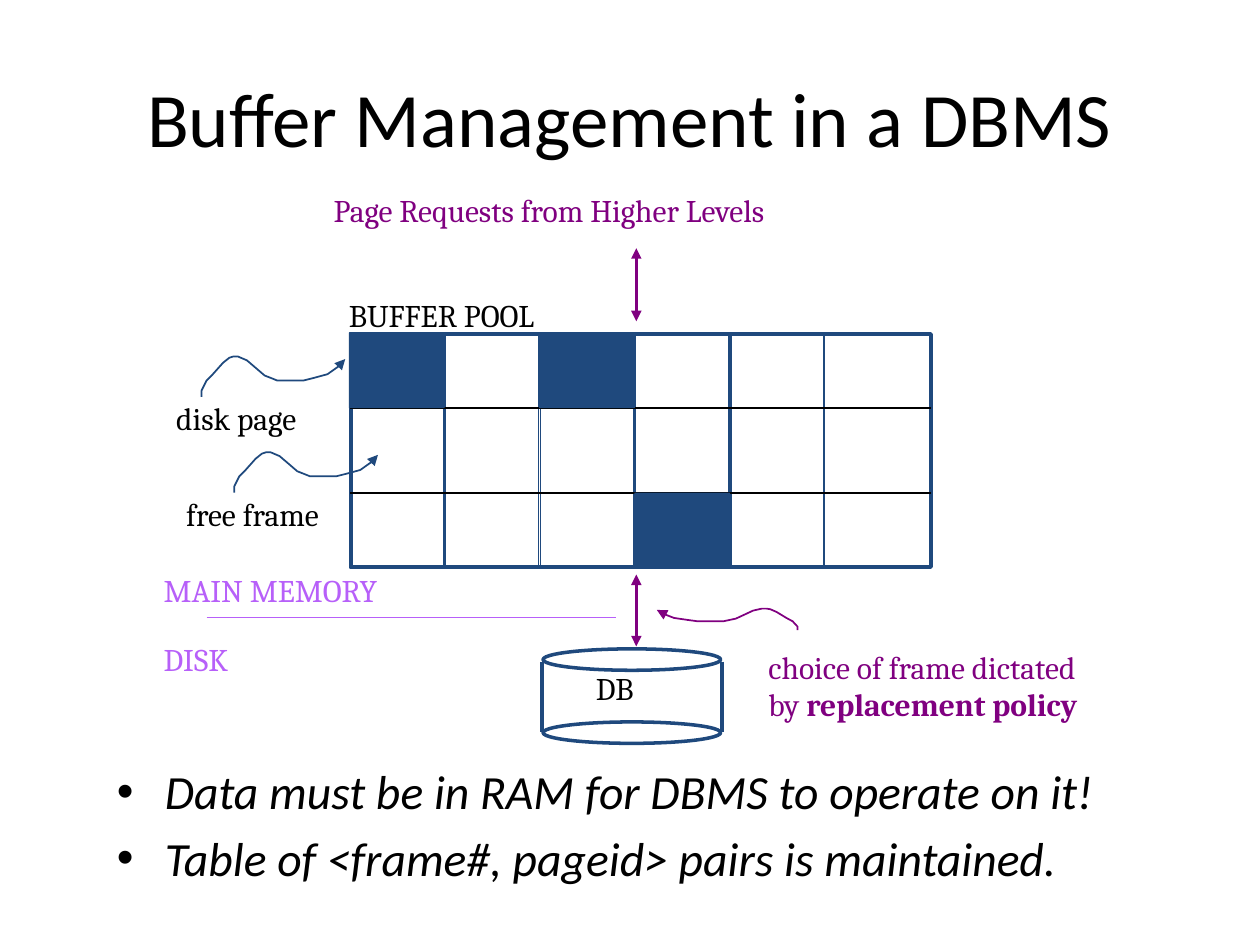
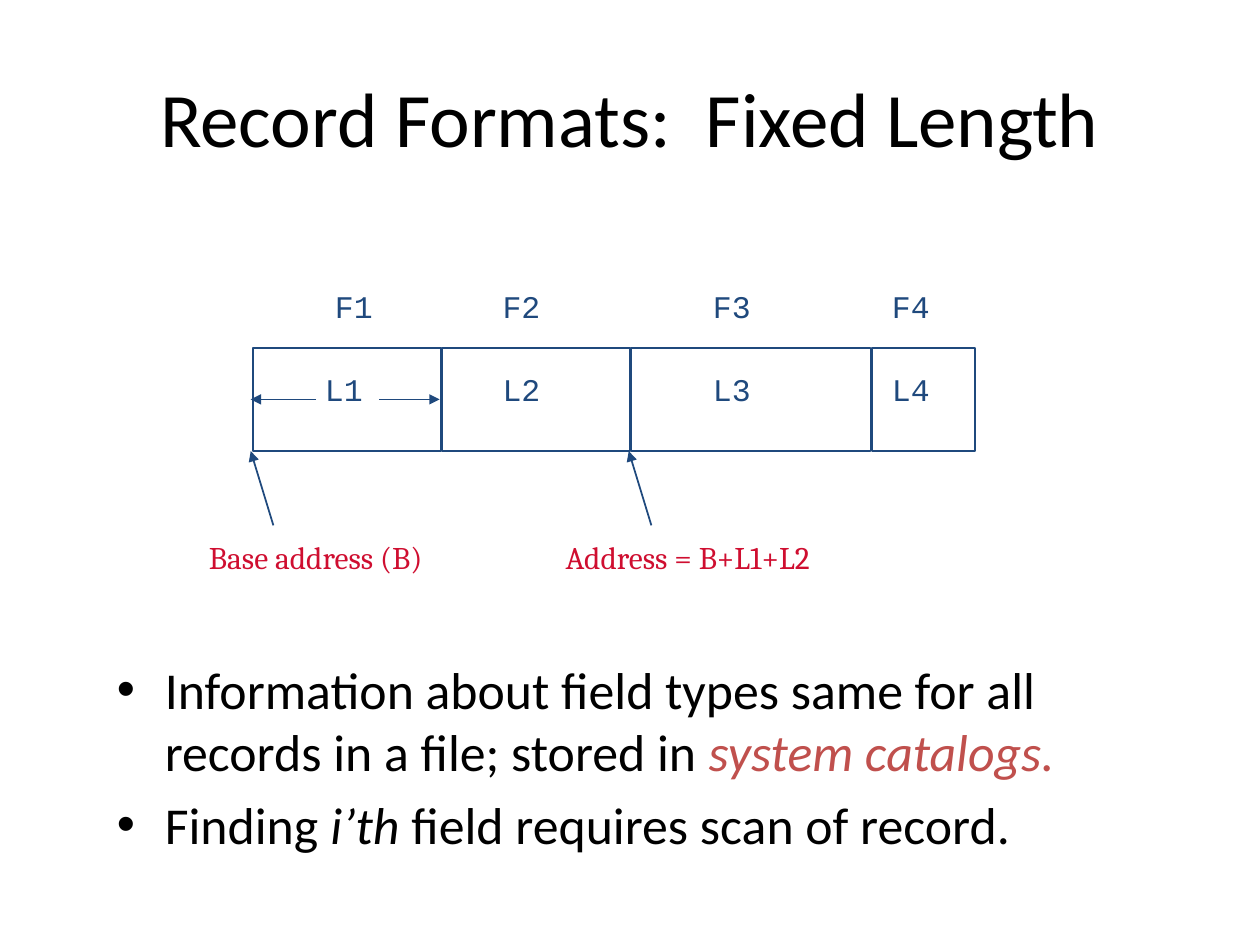
from lxml import etree
from pptx import Presentation
from pptx.dml.color import RGBColor
from pptx.enum.shapes import MSO_CONNECTOR, MSO_SHAPE
from pptx.enum.text import MSO_ANCHOR, PP_ALIGN
from pptx.oxml.ns import qn
from pptx.util import Inches, Pt

RECT, OVAL = MSO_SHAPE.RECTANGLE, MSO_SHAPE.OVAL
STRAIGHT = MSO_CONNECTOR.STRAIGHT
MIDDLE, CENTER = MSO_ANCHOR.MIDDLE, PP_ALIGN.CENTER

BLACK = RGBColor(0x00, 0x00, 0x00)
NAVY = RGBColor(0x1F, 0x49, 0x7D)
PURPLE = RGBColor(0x80, 0x00, 0x80)
VIOLET = RGBColor(0xB7, 0x60, 0xF9)
CRIMSON = RGBColor(0xCF, 0x0E, 0x30)
BRICK = RGBColor(0xC0, 0x50, 0x4D)
SANS, SERIF, MONO = "Calibri", "Cambria", "Courier New"

PLAIN, ITALIC, BOLD = {}, {"italic": True}, {"bold": True}
TERM = {"italic": True, "color": BRICK}

BUFFER_TITLE = "Buffer Management in a DBMS"
BUFFER_POINTS = [
    [("Data must be in RAM for DBMS to operate on it!", ITALIC)],
    [("Table of <frame#, pageid> pairs is maintained.", ITALIC)],
]
BUFFER_LABELS = [
    ("DB", 4.63, 5.26, 0.71, BLACK),
    ("MAIN MEMORY", 1.2, 4.48, 2.15, VIOLET),
    ("DISK", 1.2, 5.03, 0.9, VIOLET),
    ("disk page", 1.3, 3.12, 1.4, BLACK),
    ("free frame", 1.38, 3.88, 1.4, BLACK),
    ("Page Requests from Higher Levels", 2.55, 1.47, 5.3, PURPLE),
    ("BUFFER POOL", 2.67, 2.3, 1.91, BLACK),
]
POLICY_NOTE = [
    [("choice of frame dictated", PLAIN)],
    [("by ", PLAIN), ("replacement policy", BOLD)],
]
POOL_LEFT, POOL_RIGHT, FRAME_WIDTH = 2.78, 7.39, 0.755
ROW_EDGES = [2.64, 3.24, 3.91, 4.51]
USED_FRAMES = [(0, 0), (0, 2), (2, 3)]
DISK_LEFT, DISK_RIGHT = 4.3, 5.73

WAVE = [
    (0, 0), (0, -0.05), (0.04, -0.13), (0.09, -0.18), (0.17, -0.27), (0.22, -0.31),
    (0.25, -0.32), (0.29, -0.32), (0.36, -0.29), (0.43, -0.23), (0.5, -0.17),
    (0.55, -0.15), (0.6, -0.13), (0.71, -0.13), (0.81, -0.13), (0.89, -0.15),
    (1, -0.18), (1.07, -0.23), (1.1, -0.25), (1.14, -0.3),
]
WAVES = [
    (1.6, 3.15, 1, 1, NAVY),
    (1.86, 3.91, 1, 1, NAVY),
    (6.33, 5, -0.98, 0.53, PURPLE),
]

RECORD_TITLE = "Record Formats:  Fixed Length"
RECORD_POINTS = [
    [("Information about field types same for all records in a file; stored in ", PLAIN),
     ("system catalogs.", TERM)],
    [("Finding ", PLAIN), ("i’th ", ITALIC), ("field requires scan of record.", PLAIN)],
]
FIELDS = [
    (2.01, 1.49, 2.56, 2.48),
    (3.51, 1.49, 3.89, 3.89),
    (5.01, 1.9, 5.56, 5.56),
    (6.92, 0.82, 6.98, 6.98),
]
ADDRESSES = [
    ("Base address (B)", 1.56, 2.2, 1.99),
    ("Address = B+L1+L2", 4.39, 2.6, 4.99),
]


def add_text(page, paragraphs, place, font, size, color, bulleted=False):
    box = page.shapes.add_textbox(*map(Inches, place))
    frame = box.text_frame
    frame.word_wrap = True
    for index, pieces in enumerate(paragraphs):
        para = frame.add_paragraph() if index else frame.paragraphs[0]
        for text, style in pieces:
            span = para.add_run()
            span.text = text
            span.font.name = font
            span.font.size = Pt(size)
            span.font.bold = style.get("bold", False)
            span.font.italic = style.get("italic", False)
            span.font.color.rgb = style.get("color", color)
        if bulleted:
            para.space_before = Pt(round(size * 0.2, 1))
            props = para._p.get_or_add_pPr()
            props.set("marL", str(Inches(0.38)))
            props.set("indent", str(-Inches(0.38)))
            etree.SubElement(props, qn("a:buFont")).set("typeface", "Arial")
            etree.SubElement(props, qn("a:buChar")).set("char", "•")
    return frame


def add_label(page, text, left, top, width, color, font=SERIF):
    add_text(page, [[(text, PLAIN)]], (left, top, width, 0.41), font, 18, color)


def add_outline(page, kind, place, weight, fill=None):
    shape = page.shapes.add_shape(kind, *map(Inches, place))
    shape.shadow.inherit = False
    if fill is None:
        shape.fill.background()
        shape.line.color.rgb = NAVY
        shape.line.width = Pt(weight)
    else:
        shape.fill.solid()
        shape.fill.fore_color.rgb = fill
        shape.line.fill.background()


def add_arrowheads(shape, ends):
    line = shape.line._get_or_add_ln()
    for end in ends:
        etree.SubElement(line, qn(f"a:{end}")).set("type", "triangle")


def add_line(page, start, end, color, weight=1, ends=()):
    line = page.shapes.add_connector(STRAIGHT, *map(Inches, start + end))
    line.line.color.rgb = color
    line.line.width = Pt(weight)
    add_arrowheads(line, ends)
    etree.SubElement(line._element.spPr, qn("a:effectLst"))


def add_wave(page, left, top, stretch_x, stretch_y, color):
    points = [(Inches(left + x * stretch_x), Inches(top + y * stretch_y)) for x, y in WAVE]
    builder = page.shapes.build_freeform(*points[0])
    builder.add_line_segments(points[1:], close=False)
    wave = builder.convert_to_shape()
    wave.shadow.inherit = False
    wave.fill.background()
    wave.line.color.rgb = color
    wave.line.width = Pt(1)
    add_arrowheads(wave, ["tailEnd"])


def add_page(deck, title, points, place, size):
    page = deck.slides.add_slide(deck.slide_layouts[6])
    frame = add_text(page, [[(title, PLAIN)]], (0.5, 0.3, 9, 1.25), SANS, 44, BLACK)
    frame.vertical_anchor = MIDDLE
    frame.paragraphs[0].alignment = CENTER
    add_text(page, points, place, SANS, size, BLACK, bulleted=True)
    return page


def build_buffer_page(deck):
    page = add_page(deck, BUFFER_TITLE, BUFFER_POINTS, (0.83, 6, 8.5, 1.33), 27.2)
    top, bottom = ROW_EDGES[0], ROW_EDGES[-1]
    add_outline(page, RECT, (POOL_LEFT + 0.01, top + 0.01, 4.6, 1.85), 2)
    for column in range(5):
        left = POOL_LEFT + column * FRAME_WIDTH
        add_outline(page, RECT, (left, top, 0.74, bottom - top), 1)
    for edge in ROW_EDGES[1:-1]:
        add_line(page, (POOL_LEFT, edge), (POOL_RIGHT, edge), BLACK)
    for row, column in USED_FRAMES:
        left = POOL_LEFT - 0.01 + column * FRAME_WIDTH
        add_outline(page, RECT, (left, ROW_EDGES[row], 0.76, 0.6), 0, NAVY)

    for rim in (5.15, 5.73):
        add_outline(page, OVAL, (DISK_LEFT + 0.01, rim, 1.41, 0.17), 2)
    for side in (DISK_LEFT, DISK_RIGHT):
        add_line(page, (side, 5.25), (side, 5.81), NAVY, 2)

    add_line(page, (1.64, 4.9), (4.89, 4.9), VIOLET)
    for start, end in [(1.97, 2.55), (4.56, 5.13)]:
        add_line(page, (5.05, start), (5.05, end), PURPLE, 2, ["headEnd", "tailEnd"])
    for wave in WAVES:
        add_wave(page, *wave)
    for label in BUFFER_LABELS:
        add_label(page, *label)
    add_text(page, POLICY_NOTE, (6, 5.09, 2.86, 0.71), SERIF, 18, PURPLE)


def build_record_page(deck):
    page = add_page(deck, RECORD_TITLE, RECORD_POINTS, (0.83, 5.17, 8, 2), 29.6)
    for number, (left, width, name_left, length_left) in enumerate(FIELDS, 1):
        add_outline(page, RECT, (left, 2.76, width, 0.82), 1)
        add_label(page, f"F{number}", name_left, 2.23, 0.61, NAVY, MONO)
        add_label(page, f"L{number}", length_left, 2.89, 0.61, NAVY, MONO)
    for start, end in [(2.51, 1.99), (3.01, 3.49)]:
        add_line(page, (start, 3.17), (end, 3.17), NAVY, ends=["tailEnd"])
    for text, left, width, target in ADDRESSES:
        add_line(page, (target + 0.18, 4.17), (target, 3.58), NAVY, ends=["tailEnd"])
        add_label(page, text, left, 4.22, width, CRIMSON)


def main():
    deck = Presentation()
    deck.slide_width, deck.slide_height = Inches(10), Inches(7.5)
    build_buffer_page(deck)
    build_record_page(deck)
    deck.save("out.pptx")


if __name__ == "__main__":
    main()
